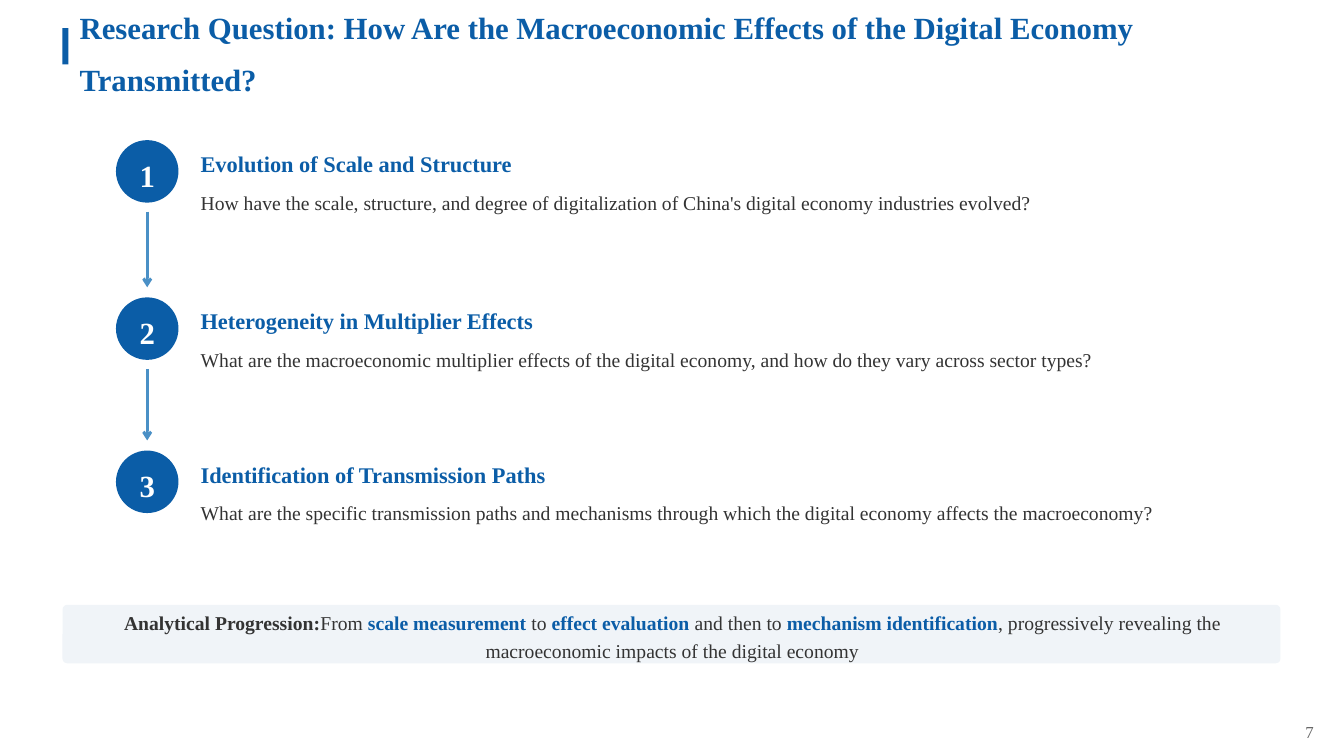
"""Build the research question slide."""
from dataclasses import dataclass
from itertools import pairwise

from lxml import etree
from pptx import Presentation, util as u
from pptx.dml.color import RGBColor
from pptx.enum import shapes, text
from pptx.oxml.ns import qn


@dataclass(frozen=True)
class Theme:
    """Hold the colours, font and type sizes."""
    blue: str = "0B5DA7"
    sky: str = "4A90C6"
    pale: str = "F0F4F8"
    ink: str = "333333"
    grey: str = "666666"
    white: str = "FFFFFF"
    font: str = "Times New Roman"
    title: int = 22
    head: int = 16
    body: int = 14
    small: int = 12


def put(obj, vals):
    """Set each value in a dict as an attribute."""
    for key, val in vals.items():
        setattr(obj, key, val)


class Deck:
    """Draw styled elements on the current slide."""

    def __init__(self, theme):
        """Open a deck with one blank slide."""
        self.theme = theme
        self.prs = Presentation()
        put(self.prs, {"slide_width": u.Inches(13.33), "slide_height": u.Inches(7.5)})
        self.slide = self.prs.slides.add_slide(self.prs.slide_layouts[6])

    def shape(self, kind, box, fill, adj=None):
        """Add a filled shape without an outline."""
        item = self.slide.shapes.add_shape(kind, *map(u.Inches, box))
        item.shadow.inherit = False
        item.fill.solid()
        item.fill.fore_color.rgb = RGBColor.from_string(fill)
        item.line.fill.background()
        if adj is not None:
            item.adjustments[0] = adj

    def text(self, box, runs, size, align="LEFT", space=1.2, wrap=False):
        """Add a text box from (words, colour, bold) runs."""
        frame = self.slide.shapes.add_textbox(*map(u.Inches, box)).text_frame
        put(frame, {"margin_left": 0, "margin_top": 0, "margin_right": 0,
                    "margin_bottom": 0, "word_wrap": wrap,
                    "vertical_anchor": text.MSO_ANCHOR.MIDDLE})
        para = frame.paragraphs[0]
        put(para, {"alignment": text.PP_ALIGN[align], "line_spacing": space})
        for words, tint, bold in runs:
            run = para.add_run()
            run.text = words
            put(run.font, {"name": self.theme.font, "size": u.Pt(size), "bold": bold})
            run.font.color.rgb = RGBColor.from_string(tint)

    def arrow(self, x, top, end):
        """Add a downward arrow."""
        line = self.slide.shapes.add_connector(
            shapes.MSO_CONNECTOR.STRAIGHT, *map(u.Inches, (x, top, x, end)))
        line.line.width = u.Pt(2)
        line.line.color.rgb = RGBColor.from_string(self.theme.sky)
        etree.SubElement(line.line._get_or_add_ln(), qn("a:tailEnd"), type="arrow")
        etree.SubElement(line._element.spPr, qn("a:effectLst"))

    def step(self, num, top, head, body):
        """Add a numbered question."""
        t = self.theme
        disc = (1.15, top, 0.62, 0.62)
        self.shape(shapes.MSO_SHAPE.OVAL, disc, t.blue)
        self.text(disc, [(str(num), t.white, True)], t.title, "CENTER")
        self.text((1.99, top, 4.17, 0.36), [(head, t.blue, True)], t.head, space=1.4)
        self.text((1.99, top + 0.36, 10.42, 0.47), [(body, t.ink, False)],
                  t.body, wrap=True)


def main():
    """Build and save the slide."""
    t = Theme()
    deck = Deck(t)
    deck.shape(shapes.MSO_SHAPE.RECTANGLE, (0.62, 0.28, 0.06, 0.36), t.blue)
    title = ("Research Question: How Are the Macroeconomic Effects "
             "of the Digital Economy Transmitted?")
    deck.text((0.79, 0.22, 11.94, 0.47), [(title, t.blue, True)], t.title, space=1.4)

    steps = [
        (1.39, "Evolution of Scale and Structure",
         "How have the scale, structure, and degree of digitalization of "
         "China's digital economy industries evolved?"),
        (2.95, "Heterogeneity in Multiplier Effects",
         "What are the macroeconomic multiplier effects of the digital economy, "
         "and how do they vary across sector types?"),
        (4.47, "Identification of Transmission Paths",
         "What are the specific transmission paths and mechanisms through which "
         "the digital economy affects the macroeconomy?"),
    ]
    for num, step in enumerate(steps, 1):
        deck.step(num, *step)
    for (top, *_), (low, *_) in pairwise(steps):
        deck.arrow(1.46, top + 0.71, low - 0.1)

    deck.shape(shapes.MSO_SHAPE.ROUNDED_RECTANGLE, (0.62, 6, 12.08, 0.58), t.pale, 0.08)
    deck.text((0.89, 6.1, 11.56, 0.39), [
        ("Analytical Progression:", t.ink, True),
        ("From ", t.ink, False),
        ("scale measurement", t.blue, True),
        (" to ", t.ink, False),
        ("effect evaluation", t.blue, True),
        (" and then to ", t.ink, False),
        ("mechanism identification", t.blue, True),
        (", progressively revealing the macroeconomic impacts of the digital economy",
         t.ink, False),
    ], t.body, "CENTER", wrap=True)
    deck.text((12.5, 7.08, 0.53, 0.28), [("7", t.grey, False)], t.small, "RIGHT", 1.4)
    deck.prs.save("out.pptx")


if __name__ == "__main__":
    main()
